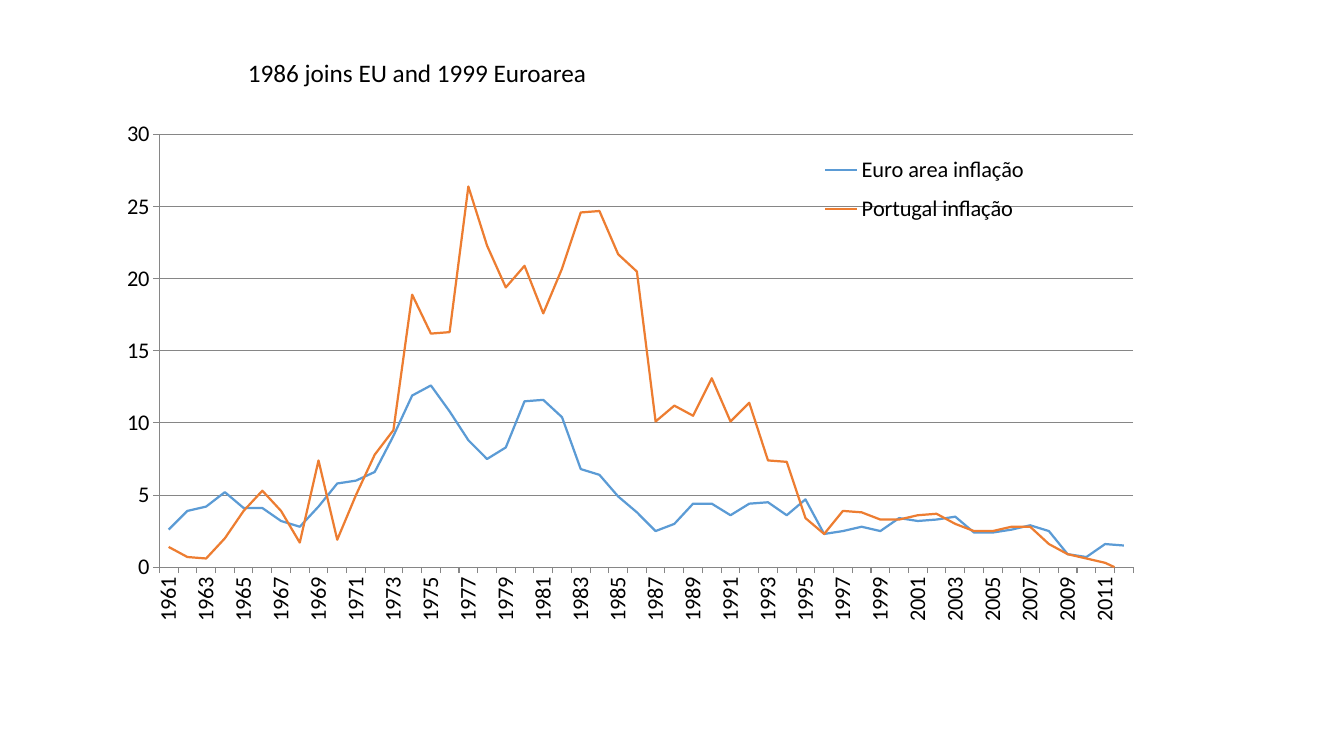
from dataclasses import dataclass

from lxml.etree import SubElement
from pptx import Presentation
from pptx.chart.data import CategoryChartData
from pptx.dml.color import RGBColor
from pptx.enum.chart import XL_CHART_TYPE, XL_LEGEND_POSITION, XL_MARKER_STYLE, XL_TICK_MARK
from pptx.enum.text import MSO_ANCHOR, PP_ALIGN
from pptx.oxml import parse_xml
from pptx.oxml.ns import nsdecls, qn
from pptx.util import Inches, Pt


@dataclass(frozen=True)
class Theme:
    """Colours, font and type sizes of the slide."""
    font: str = "Calibri"
    text: str = "000000"
    grid: str = "868686"
    euro: str = "5B9BD5"
    portugal: str = "ED7D31"
    title_size: float = 18
    chart_size: float = 16
    line_width: float = 1.6
    grid_width: float = 0.75


THEME = Theme()
WIDTH, HEIGHT = Inches(13.33), Inches(7.5)
TITLE = "1986 joins EU and 1999 Euroarea"
TITLE_BOX = (0.177, 0.069, 0.27, 0.054)
CHART_BOX = (0.0923, 0.1, 0.7734, 0.7733)
PLOT_BOX = (0.034, 0.101, 0.937, 0.74)
LEGEND_BOX = (0.655, 0.12, 0.23, 0.15)
YEARS = range(1961, 2013)
INFLATION = {
    "Euro area inflação": (THEME.euro, [
        2.6, 3.9, 4.2, 5.2, 4.1, 4.1, 3.2, 2.8, 4.2, 5.8, 6, 6.6, 9.1,
        11.9, 12.6, 10.8, 8.8, 7.5, 8.3, 11.5, 11.6, 10.4, 6.8, 6.4, 4.9, 3.8,
        2.5, 3, 4.4, 4.4, 3.6, 4.4, 4.5, 3.6, 4.7, 2.3, 2.5, 2.8, 2.5,
        3.4, 3.2, 3.3, 3.5, 2.4, 2.4, 2.6, 2.9, 2.5, 0.9, 0.7, 1.6, 1.5]),
    "Portugal inflação": (THEME.portugal, [
        1.4, 0.7, 0.6, 2, 3.9, 5.3, 3.9, 1.7, 7.4, 1.9, 5, 7.8, 9.5,
        18.9, 16.2, 16.3, 26.4, 22.3, 19.4, 20.9, 17.6, 20.7, 24.6, 24.7, 21.7, 20.5,
        10.1, 11.2, 10.5, 13.1, 10.1, 11.4, 7.4, 7.3, 3.4, 2.3, 3.9, 3.8, 3.3,
        3.3, 3.6, 3.7, 3, 2.5, 2.5, 2.8, 2.8, 1.6, 0.9, 0.6, 0.3, -0.3]),
}


def place(box):
    """Turn shares of the slide into left, top, width and height."""
    return [int(share * side) for share, side in zip(box, (WIDTH, HEIGHT) * 2)]


def style_font(font, size):
    """Apply the theme font, colour and a size."""
    font.name, font.size, font.bold = THEME.font, Pt(size), False
    font.color.rgb = RGBColor.from_string(THEME.text)


def style_line(line, color, width):
    """Set the colour and width of a line."""
    line.color.rgb = RGBColor.from_string(color)
    line.width = Pt(width)


def set_layout(element, index, box, inner=False):
    """Give a chart part a manual layout in shares of the chart."""
    for old in element.findall(qn("c:layout")):
        element.remove(old)
    layout = parse_xml(f"<c:layout {nsdecls('c')}><c:manualLayout/></c:layout>")
    settings = [("layoutTarget", "inner")] if inner else []
    settings += [("xMode", "edge"), ("yMode", "edge"), *zip("xywh", box)]
    for tag, value in settings:
        SubElement(layout[0], qn(f"c:{tag}")).set("val", str(value))
    element.insert(index, layout)


def add_title(s):
    """Write the heading in the title placeholder."""
    sp = s.shapes.title
    sp.left, sp.top, sp.width, sp.height = place(TITLE_BOX)
    tf = sp.text_frame
    tf.word_wrap = False
    tf.vertical_anchor = MSO_ANCHOR.TOP
    p = tf.paragraphs[0]
    p.alignment = PP_ALIGN.LEFT
    p.line_spacing = 1
    r = p.add_run()
    r.text = TITLE
    style_font(r.font, THEME.title_size)


def format_axes(chart):
    """Format the year axis, the value axis and its gridlines."""
    years, values = chart.category_axis, chart.value_axis
    for axis in (years, values):
        axis.major_tick_mark = XL_TICK_MARK.OUTSIDE
        axis.minor_tick_mark = XL_TICK_MARK.NONE
        style_font(axis.tick_labels.font, THEME.chart_size)
        style_line(axis.format.line, THEME.grid, THEME.grid_width)
    values.minimum_scale, values.maximum_scale, values.major_unit = 0, 30, 5
    values.has_major_gridlines = True
    style_line(values.major_gridlines.format.line, THEME.grid, THEME.grid_width)
    ax = years._element
    ax.find(qn("c:txPr")).find(qn("a:bodyPr")).set("rot", "-5400000")
    skip = parse_xml(f'<c:tickLblSkip {nsdecls("c")} val="2"/>')
    ax.find(qn("c:noMultiLvlLbl")).addprevious(skip)


def format_legend(chart):
    """Lay the legend over the upper right of the plot."""
    chart.has_legend = True
    legend = chart.legend
    legend.position = XL_LEGEND_POSITION.RIGHT
    legend.include_in_layout = False
    style_font(legend.font, THEME.chart_size)
    set_layout(legend._element, 1, LEGEND_BOX)


def add_inflation_chart(s):
    """Add the line chart of yearly inflation."""
    data = CategoryChartData()
    data.categories = [str(year) for year in YEARS]
    for name, (_, rates) in INFLATION.items():
        data.add_series(name, rates)
    chart = s.shapes.add_chart(XL_CHART_TYPE.LINE, *place(CHART_BOX), data).chart
    chart.has_title = False
    style_font(chart.font, THEME.chart_size)
    plot = chart.plots[0]
    plot.vary_by_categories = False
    for series, (color, _) in zip(plot.series, INFLATION.values()):
        series.smooth = False
        series.marker.style = XL_MARKER_STYLE.NONE
        style_line(series.format.line, color, THEME.line_width)
    format_axes(chart)
    format_legend(chart)
    set_layout(chart._chartSpace.chart.plotArea, 0, PLOT_BOX, inner=True)


def main():
    """Build the slide and save it."""
    prs = Presentation()
    prs.slide_width, prs.slide_height = WIDTH, HEIGHT
    s = prs.slides.add_slide(prs.slide_layouts[5])
    add_inflation_chart(s)
    add_title(s)
    prs.save("out.pptx")


if __name__ == "__main__":
    main()
